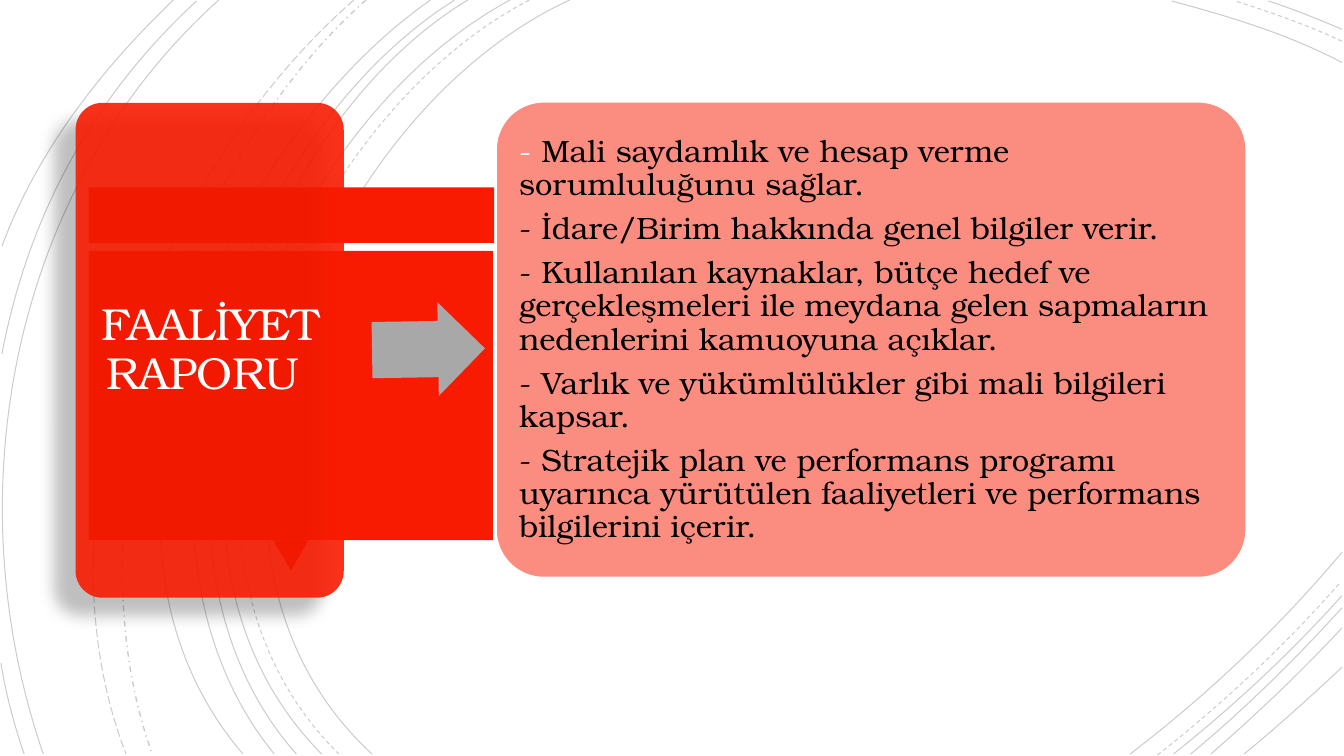
from lxml.etree import SubElement
from pptx import Presentation
from pptx.dml.color import RGBColor
from pptx.enum.dml import MSO_LINE
from pptx.enum.shapes import MSO_SHAPE
from pptx.enum.text import MSO_ANCHOR, PP_ALIGN
from pptx.oxml.ns import qn
from pptx.util import Cm, Pt

FONT = "TeX Gyre Bonum"
RED, GREY, BLACK, WHITE = "F81B02", "A8A8A8", "000000", "FFFFFF"

TITLE = "FAALİYET RAPORU "
POINTS = [
    [("- ", WHITE), ("Mali saydamlık ve hesap verme sorumluluğunu sağlar.", BLACK)],
    [("- İdare/Birim hakkında genel bilgiler verir.", BLACK)],
    [("- Kullanılan kaynaklar, bütçe hedef ve gerçekleşmeleri ile meydana gelen "
      "sapmaların nedenlerini kamuoyuna açıklar.", BLACK)],
    [("- Varlık ve yükümlülükler gibi mali bilgileri kapsar.", BLACK)],
    [("- Stratejik plan ve performans programı uyarınca yürütülen faaliyetleri ve "
      "performans bilgilerini içerir.", BLACK)],
]

SOLID, DASH = MSO_LINE.SOLID, MSO_LINE.DASH
ARCS = [
    ((5.65, 0), (3.15, 1.15), (1.43, 5.4), (3.69, 7.48), SOLID),
    ((13.31, 0.62), (12.78, 0.34), (12.18, 0.16), (11.62, 0.01), SOLID),
    ((11.21, 7.48), (11.97, 6.9), (12.69, 6.22), (13.31, 5.48), SOLID),
    ((5.25, 0), (2.85, 1.25), (1.23, 5.37), (3.36, 7.48), DASH),
    ((13.31, 0.41), (12.97, 0.25), (12.6, 0.12), (12.25, 0.01), DASH),
    ((11.48, 7.49), (12.13, 6.98), (12.75, 6.4), (13.3, 5.77), DASH),
    ((5.06, 0), (2.7, 1.27), (1.1, 5.37), (3.19, 7.48), SOLID),
    ((13.31, 0.29), (13.07, 0.19), (12.83, 0.09), (12.58, 0.01), SOLID),
    ((11.64, 7.48), (12.23, 7.01), (12.8, 6.48), (13.31, 5.91), SOLID),
    ((4.64, 0), (2.44, 1.33), (1.1, 5.41), (2.94, 7.48), SOLID),
    ((11.81, 7.48), (12.34, 7.04), (12.84, 6.55), (13.31, 6.03), SOLID),
    ((4.51, 0), (2.31, 1.38), (0.97, 5.33), (2.72, 7.48), SOLID),
    ((12.01, 7.48), (12.46, 7.09), (12.9, 6.67), (13.31, 6.23), SOLID),
    ((4.27, 0), (2.17, 1.47), (0.53, 5.29), (2.41, 7.48), SOLID),
    ((12.34, 7.48), (12.67, 7.21), (12.99, 6.92), (13.31, 6.62), SOLID),
    ((3.63, 0), (1.76, 1.66), (0.65, 5.09), (1.51, 7.48), MSO_LINE.DASH_DOT),
    ((3.51, 0), (1.57, 1.69), (0.29, 4.99), (1.25, 7.48), MSO_LINE.LONG_DASH),
    ((2.17, 0), (0.11, 1.85), (-0.46, 4.9), (0.43, 7.48), SOLID),
    ((1.95, 0.01), (0.92, 0.96), (0.28, 2.14), (0.02, 3.51), SOLID),
    ((0.01, 6.58), (0.06, 6.89), (0.14, 7.19), (0.24, 7.48), SOLID),
    ((1.72, 0), (1, 0.69), (0.37, 1.5), (0.02, 2.44), SOLID),
]

BANDS = [
    (MSO_SHAPE.RECTANGLE, (0.88, 1.86, 4.02, 0.55), 0),
    (MSO_SHAPE.ISOSCELES_TRIANGLE, (2.71, 5.36, 0.35, 0.3), 180),
    (MSO_SHAPE.RECTANGLE, (0.88, 2.49, 4.01, 2.87), 0),
]


def inches(v):
    return Cm(v * 2.54)


def paint(fill, color, alpha=100):
    fill.solid()
    fill.fore_color.rgb = RGBColor.from_string(color)
    if alpha < 100:
        clr = fill._xPr.find(qn("a:solidFill"))[0]
        SubElement(clr, qn("a:alpha"), val=str(alpha * 1000))


def add_arc(*arc):
    *points, dash = arc
    start, *rest = [tuple(map(inches, point)) for point in points]
    builder = s.shapes.build_freeform(*start)
    builder.add_line_segments(rest, close=False)
    sp = builder.convert_to_shape()
    outline = next(sp._element.iter(qn("a:path")))
    segments = outline.findall(qn("a:lnTo"))
    curve = SubElement(outline, qn("a:cubicBezTo"))
    for segment in segments:
        curve.append(segment[0])
        outline.remove(segment)
    sp.shadow.inherit = False
    sp.fill.background()
    paint(sp.line.fill, BLACK, 20)
    sp.line.width = Pt(1 if dash == MSO_LINE.DASH_DOT else 0.75)
    sp.line.dash_style = dash


def add_block(kind, box, color, alpha=100, rotation=0):
    sp = s.shapes.add_shape(kind, *map(inches, box))
    sp.shadow.inherit = False
    paint(sp.fill, color, alpha)
    sp.line.fill.background()
    sp.rotation = rotation
    return sp


def add_text(box, paragraphs, size, inset, align):
    tf = s.shapes.add_textbox(*map(inches, box)).text_frame
    tf.word_wrap = True
    tf.vertical_anchor = MSO_ANCHOR.MIDDLE
    tf.margin_left = tf.margin_right = tf.margin_top = tf.margin_bottom = inches(inset)
    for i, runs in enumerate(paragraphs):
        p = tf.add_paragraph() if i else tf.paragraphs[0]
        p.alignment = align
        p.line_spacing = 0.9
        p.space_after = Pt(size * 0.35)
        p.font.size = Pt(size)
        p.font.name = FONT
        for text, color in runs:
            r = p.add_run()
            r.text = text
            r.font.color.rgb = RGBColor.from_string(color)


prs = Presentation()
prs.slide_width, prs.slide_height = inches(13.33), inches(7.5)
s = prs.slides.add_slide(prs.slide_layouts[6])

for arc in ARCS:
    add_arc(*arc)
for kind, box, rotation in BANDS:
    add_block(kind, box, RED, rotation=rotation)

card = add_block(MSO_SHAPE.ROUNDED_RECTANGLE, (0.75, 1.02, 2.66, 4.91), RED, 90)
card.adjustments[0] = 0.1
effects = card._element.spPr.find(qn("a:effectLst"))
shadow = SubElement(effects, qn("a:outerShdw"), blurRad=str(Pt(11.8)), dist=str(Pt(19.7)),
                    dir=str(141 * 60000), algn="ctr", rotWithShape="0")
SubElement(SubElement(shadow, qn("a:srgbClr"), val=BLACK), qn("a:alpha"), val="28000")
add_text((0.83, 1.1, 2.51, 4.75), [[(TITLE, WHITE)]], 32, 0.13, PP_ALIGN.CENTER)

arrow = add_block(MSO_SHAPE.RIGHT_ARROW, (3.69, 3, 1.12, 0.93), GREY, rotation=359.1)
arrow.adjustments[0] = 0.6

panel = add_block(MSO_SHAPE.ROUNDED_RECTANGLE, (4.92, 1.01, 7.44, 4.72), RED, 50)
panel.adjustments[0] = 0.1
paint(panel.line.fill, WHITE)
panel.line.width = Pt(1.25)
add_text((5.06, 1.15, 7.17, 4.45), POINTS, 22, 0.09, PP_ALIGN.LEFT)

prs.save("out.pptx")
